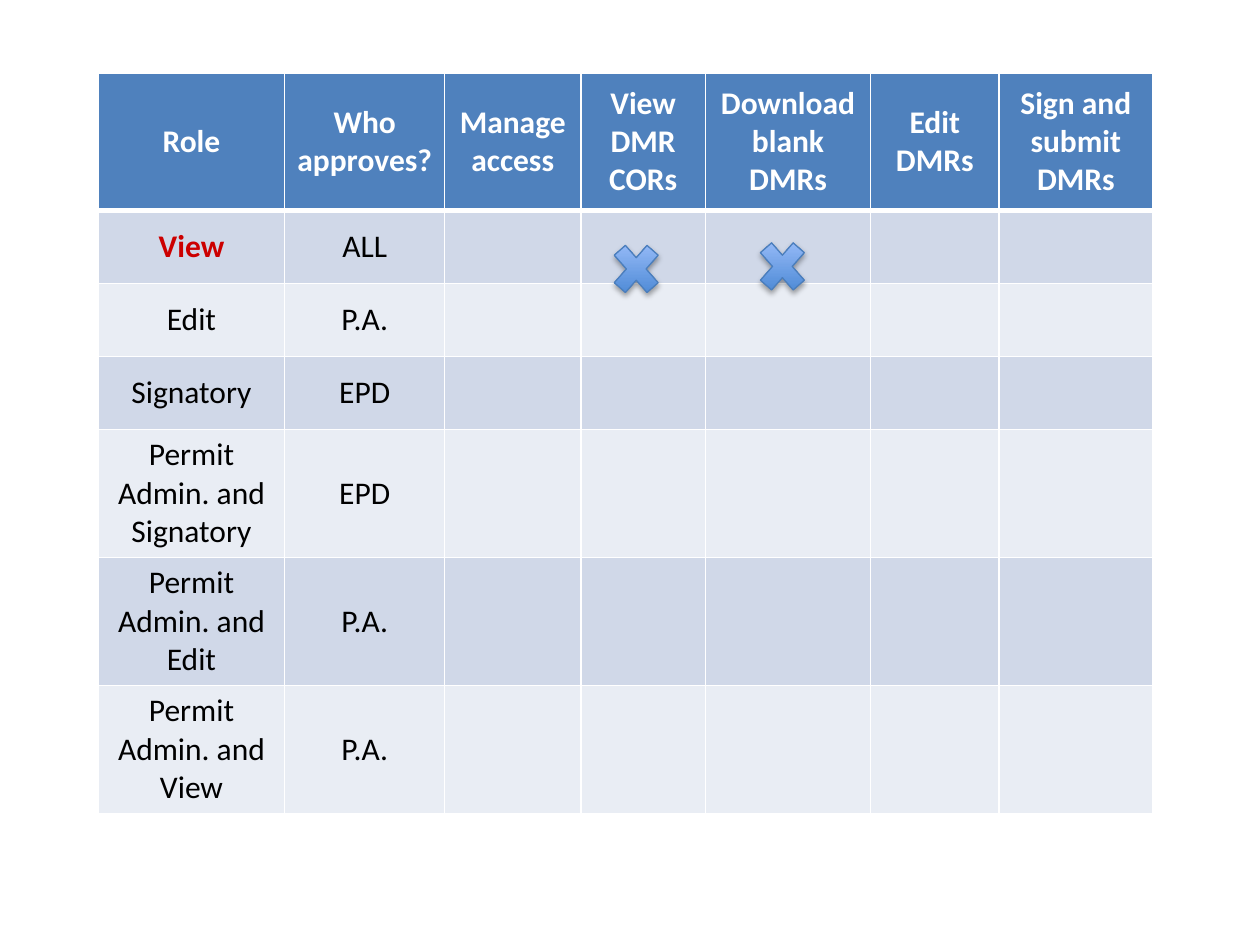
from dataclasses import dataclass

from lxml import etree
from pptx import Presentation
from pptx.dml.color import RGBColor
from pptx.enum.shapes import MSO_SHAPE
from pptx.enum.text import MSO_ANCHOR, PP_ALIGN
from pptx.oxml.ns import qn
from pptx.util import Inches, Pt

CROSS = MSO_SHAPE.MATH_MULTIPLY
CENTER = PP_ALIGN.CENTER
MIDDLE = MSO_ANCHOR.MIDDLE


@dataclass(frozen=True)
class Theme:
    font: str = "Calibri"
    text_size: float = 18
    header_fill: str = "4F81BD"
    bands: tuple = ("D0D8E8", "E9EDF4")
    light: str = "FFFFFF"
    dark: str = "000000"
    highlight: str = "CC0000"
    cross_fill: tuple = ("3F80CE", "A4C4FF")
    cross_line: str = "4B7EBC"
    thin_rule: float = 1
    header_rule: float = 3


THEME = Theme()

TABLE_LEFT, TABLE_TOP, TABLE_HEIGHT = 0.78, 0.58, 5.82
COLUMN_WIDTHS = [1.48, 1.27, 1.08, 0.99, 1.31, 1.02, 1.22]
ROW_HEIGHTS = [1.09, 0.58, 0.58, 0.58, 0.78, 0.76, 0.76]
CROSS_SIZE = (0.5, 0.57)

HEADINGS = ["Role", "Who approves?", "Manage access", "View DMR CORs",
            "Download blank DMRs", "Edit DMRs", "Sign and submit DMRs"]
ROLES = [
    ("View", "ALL"),
    ("Edit", "P.A."),
    ("Signatory", "EPD"),
    ("Permit Admin. and Signatory", "EPD"),
    ("Permit Admin. and Edit", "P.A."),
    ("Permit Admin. and View", "P.A."),
]
HIGHLIGHTED_ROLE = "View"
# Table column, then offsets from that column's left and the first role's top
GRANTED = [(3, 0.19, 0.18), (4, 0.36, 0.16)]


def rgb(value):
    return RGBColor.from_string(value)


def write_text(frame, text, *, color=THEME.dark, bold=False, align=CENTER):
    paragraph = frame.paragraphs[0]
    paragraph.alignment = align
    run = paragraph.add_run()
    run.text = text
    run.font.name = THEME.font
    run.font.size = Pt(THEME.text_size)
    run.font.bold = bold
    run.font.color.rgb = rgb(color)


def add_borders(cell, **widths):
    """Draw light borders; widths in points are keyed by side: L, R, T, B."""
    properties = cell._tc.get_or_add_tcPr()
    for position, side in enumerate("LRTB"):
        width = Pt(widths.get(side, THEME.thin_rule))
        line = etree.Element(qn(f"a:ln{side}"), w=str(width))
        fill = etree.SubElement(line, qn("a:solidFill"))
        etree.SubElement(fill, qn("a:srgbClr"), val=THEME.light)
        properties.insert(position, line)


def style_cell(cell, fill, **border_widths):
    cell.fill.solid()
    cell.fill.fore_color.rgb = rgb(fill)
    cell.vertical_anchor = MIDDLE
    add_borders(cell, **border_widths)


def add_role_table(slide):
    frame = slide.shapes.add_table(
        len(ROW_HEIGHTS), len(COLUMN_WIDTHS), Inches(TABLE_LEFT),
        Inches(TABLE_TOP), Inches(sum(COLUMN_WIDTHS)), Inches(TABLE_HEIGHT))
    table = frame.table
    for column, width in zip(table.columns, COLUMN_WIDTHS):
        column.width = Inches(width)
    for row, height in zip(table.rows, ROW_HEIGHTS):
        row.height = Inches(height)
    frame.height = Inches(TABLE_HEIGHT)

    for cell, heading in zip(table.rows[0].cells, HEADINGS):
        style_cell(cell, THEME.header_fill, B=THEME.header_rule)
        write_text(cell.text_frame, heading, color=THEME.light, bold=True)

    for index, (role, approver) in enumerate(ROLES):
        cells = list(table.rows[index + 1].cells)
        top_rule = THEME.thin_rule if index else THEME.header_rule
        for cell in cells:
            style_cell(cell, THEME.bands[index % 2], T=top_rule)
        marked = role == HIGHLIGHTED_ROLE
        write_text(cells[0].text_frame, role, bold=marked,
                   color=THEME.highlight if marked else THEME.dark)
        write_text(cells[1].text_frame, approver)


def add_soft_shadow(shape):
    shape.shadow.inherit = False
    effects = shape._element.spPr.find(qn("a:effectLst"))
    shadow = etree.SubElement(
        effects, qn("a:outerShdw"), blurRad=str(Pt(3.1)), dist=str(Pt(1.8)),
        dir="5400000", rotWithShape="0")
    color = etree.SubElement(shadow, qn("a:srgbClr"), val=THEME.dark)
    etree.SubElement(color, qn("a:alpha"), val="35000")


def add_cross(slide, column, dx, dy):
    left = TABLE_LEFT + sum(COLUMN_WIDTHS[:column]) + dx
    top = TABLE_TOP + ROW_HEIGHTS[0] + dy
    width, height = CROSS_SIZE
    cross = slide.shapes.add_shape(
        CROSS, Inches(left), Inches(top), Inches(width), Inches(height))
    cross.fill.gradient()
    cross.fill.gradient_angle = 90
    for stop, position, color in zip(
            cross.fill.gradient_stops, (0, 1), THEME.cross_fill):
        stop.position = position
        stop.color.rgb = rgb(color)
    cross.line.color.rgb = rgb(THEME.cross_line)
    cross.line.width = Pt(0.75)
    add_soft_shadow(cross)


def main():
    presentation = Presentation()
    presentation.slide_width = Inches(10)
    presentation.slide_height = Inches(7.5)
    slide = presentation.slides.add_slide(presentation.slide_layouts[6])
    add_role_table(slide)
    for column, dx, dy in GRANTED:
        add_cross(slide, column, dx, dy)
    presentation.save("out.pptx")


if __name__ == "__main__":
    main()
